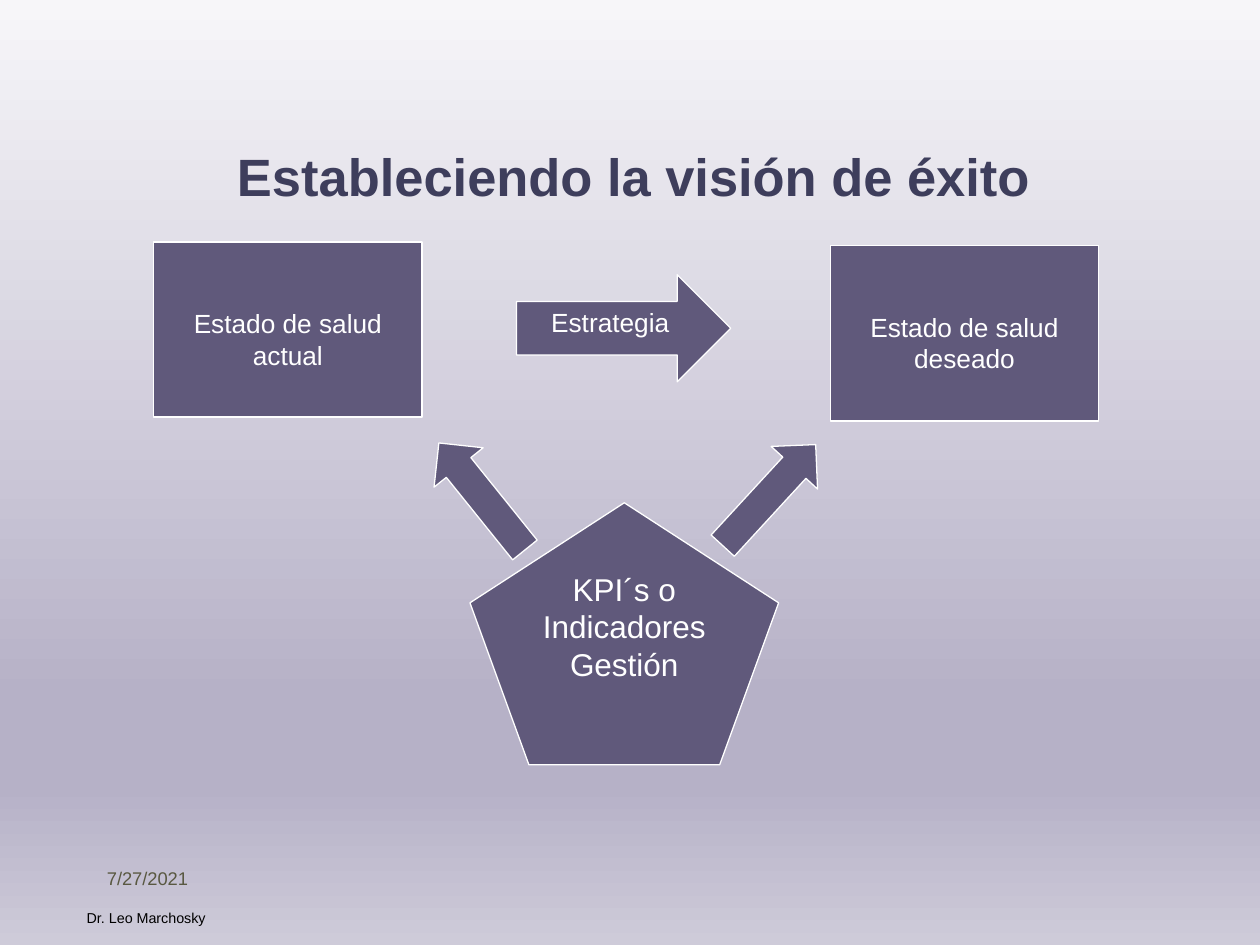
"""Build the slide that links health states, strategy and indicators."""
from copy import deepcopy
from dataclasses import dataclass

from pptx import Presentation
from pptx import util as u
from pptx.dml.color import RGBColor
from pptx.enum import shapes, text

Inches, Pt = u.Inches, u.Pt
Kind = shapes.MSO_SHAPE


@dataclass(frozen=True)
class Theme:
    font: str = "Arial"
    block: str = "60597B"
    light: str = "FFFFFF"
    title: str = "3E3E5C"
    date: str = "595841"
    author: str = "000000"
    backdrop: tuple = ((0, "F7F6F9"), (0.74, "B6B1C7"), (0.83, "B6B1C7"), (1, "CECBD9"))
    title_size: float = 30
    core_size: float = 18
    label_size: float = 15
    date_size: float = 10.5
    author_size: float = 8.2


@dataclass(frozen=True)
class Block:
    kind: Kind
    left: float
    top: float
    width: float
    height: float
    label: str = ""
    size: float = 15
    inset_top: float = 0.04
    rotation: float = 0


@dataclass(frozen=True)
class Note:
    left: float
    top: float
    width: float
    height: float
    label: str
    size: float
    color: str
    wrap: bool


THEME = Theme()
STATE_SIZE = (2.13, 1.39)
LINK_SIZE = (1.09, 0.5)
STATE_INSET = 0.52

BLOCKS = (
    Block(Kind.FLOWCHART_PROCESS, 1.22, 1.92, *STATE_SIZE, "Estado de salud actual",
          THEME.label_size, STATE_INSET),
    Block(Kind.FLOWCHART_PROCESS, 6.59, 1.95, *STATE_SIZE, "Estado de salud deseado",
          THEME.label_size, STATE_INSET),
    Block(Kind.REGULAR_PENTAGON, 3.73, 3.99, 2.45, 2.08, "KPI´s o Indicadores Gestión",
          THEME.core_size),
    Block(Kind.RIGHT_ARROW, 4.1, 2.18, 1.7, 0.85, "Estrategia", THEME.label_size),
    Block(Kind.RIGHT_ARROW, 3.28, 3.69, *LINK_SIZE, rotation=231.2),
    Block(Kind.RIGHT_ARROW, 5.56, 3.68, *LINK_SIZE, rotation=312.6),
)
NOTES = (
    Note(0.75, 6.83, 2.08, 0.5, "7/27/2021", THEME.date_size, THEME.date, True),
    Note(0.59, 7.17, 1.17, 0.24, "Dr. Leo Marchosky", THEME.author_size, THEME.author, False),
)


def rgb(color: str) -> RGBColor:
    """Turn a hex string into a colour."""
    return RGBColor.from_string(color)


def write(frame, label: str, size: float, color: str, align=None, bold: bool = False) -> None:
    """Write one formatted paragraph into a text frame."""
    para = frame.paragraphs[0]
    para.text = label
    para.alignment = align
    para.font.name = THEME.font
    para.font.size = Pt(size)
    para.font.bold = bold
    para.font.color.rgb = rgb(color)


def paint_background(page) -> None:
    """Fill the page with the vertical gradient."""
    fill = page.background.fill
    fill.gradient()
    fill.gradient_angle = 270
    stops = page.element.xpath(".//a:gsLst")[0]
    for _ in range(len(THEME.backdrop) - len(stops)):
        stops.append(deepcopy(stops[0]))
    for stop, (position, color) in zip(fill.gradient_stops, THEME.backdrop):
        stop.position = position
        stop.color.rgb = rgb(color)


def add_title(page, label: str) -> None:
    """Place and format the title."""
    title = page.shapes.title
    title.left, title.top = Inches(1.5), Inches(0.92)
    title.width, title.height = Inches(7.06), Inches(0.94)
    frame = title.text_frame
    frame.auto_size = text.MSO_AUTO_SIZE.NONE
    frame.vertical_anchor = text.MSO_ANCHOR.MIDDLE
    write(frame, label, THEME.title_size, THEME.title, text.PP_ALIGN.CENTER, True)


def add_block(page, block: Block) -> None:
    """Draw one filled shape with its label."""
    shape = page.shapes.add_shape(block.kind, Inches(block.left), Inches(block.top),
                                  Inches(block.width), Inches(block.height))
    shape.rotation = block.rotation
    shape.shadow.inherit = False
    shape.fill.solid()
    shape.fill.fore_color.rgb = rgb(THEME.block)
    shape.line.color.rgb = rgb(THEME.light)
    shape.line.width = Pt(0.75)
    if block.label:
        frame = shape.text_frame
        frame.vertical_anchor = text.MSO_ANCHOR.TOP
        frame.margin_left = frame.margin_right = Inches(0.07)
        frame.margin_top, frame.margin_bottom = Inches(block.inset_top), Inches(0.04)
        write(frame, block.label, block.size, THEME.light, text.PP_ALIGN.CENTER)


def add_note(page, note: Note) -> None:
    """Add one footer text."""
    box = page.shapes.add_textbox(Inches(note.left), Inches(note.top),
                                  Inches(note.width), Inches(note.height))
    box.text_frame.word_wrap = note.wrap
    write(box.text_frame, note.label, note.size, note.color)


def main() -> None:
    """Build and save the deck."""
    deck = Presentation()
    deck.slide_width, deck.slide_height = Inches(10), Inches(7.5)
    page = deck.slides.add_slide(deck.slide_layouts[5])
    paint_background(page)
    add_title(page, "Estableciendo la visión de éxito")
    for note in NOTES:
        add_note(page, note)
    for block in BLOCKS:
        add_block(page, block)
    deck.save("out.pptx")


if __name__ == "__main__":
    main()
